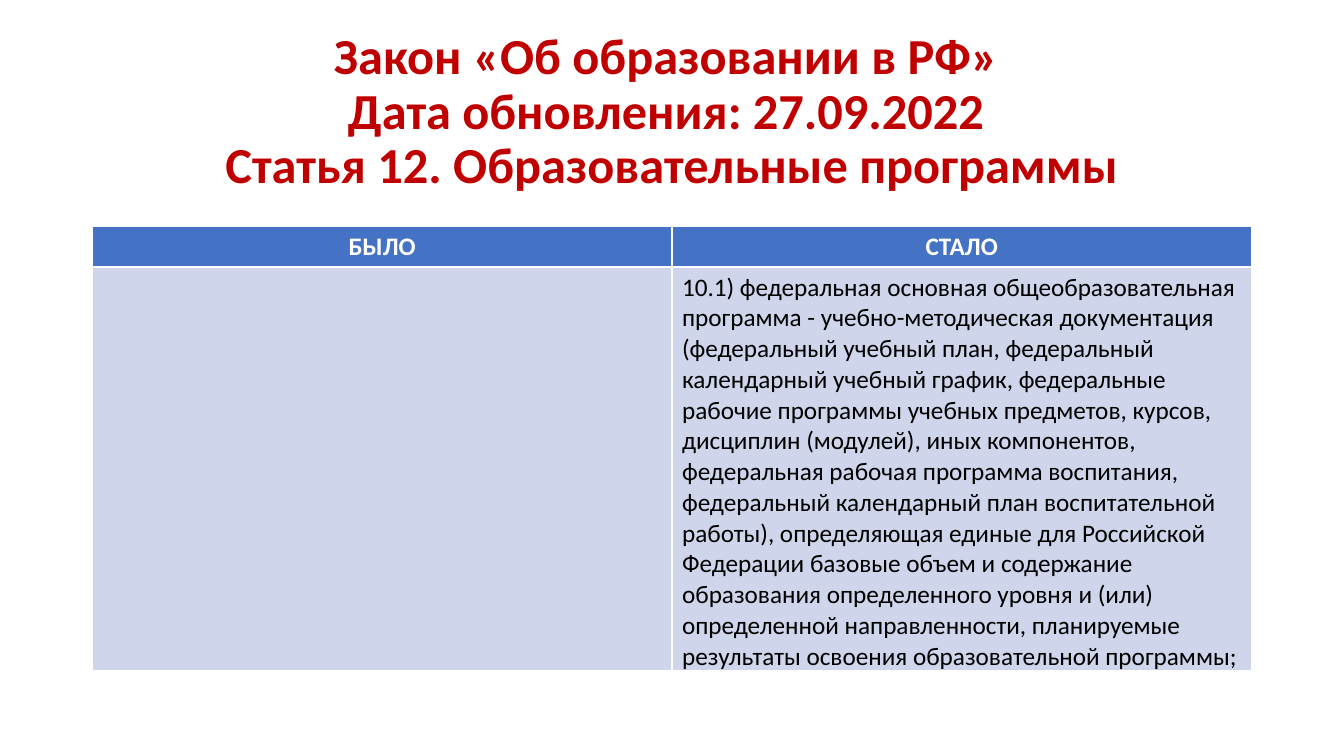
from pptx import Presentation
from pptx.dml.color import RGBColor
from pptx.enum.text import MSO_ANCHOR, PP_ALIGN
from pptx.util import Cm, Pt

RED = RGBColor(0xC0, 0x00, 0x00)
BLUE = RGBColor(0x44, 0x72, 0xC4)
PALE_BLUE = RGBColor(0xCF, 0xD5, 0xEA)
WHITE = RGBColor(0xFF, 0xFF, 0xFF)
BLACK = RGBColor(0x00, 0x00, 0x00)

TITLE = (
    "Закон «Об образовании в РФ» \v"
    "Дата обновления: 27.09.2022 \v"
    "Статья 12. Образовательные программы"
)
NEW_TEXT = (
    "10.1) федеральная основная общеобразовательная программа - "
    "учебно-методическая документация (федеральный учебный план, "
    "федеральный календарный учебный график, федеральные рабочие программы "
    "учебных предметов, курсов, дисциплин (модулей), иных компонентов, "
    "федеральная рабочая программа воспитания, федеральный календарный план "
    "воспитательной работы), определяющая единые для Российской Федерации "
    "базовые объем и содержание образования определенного уровня и (или) "
    "определенной направленности, планируемые результаты освоения "
    "образовательной программы;"
)
LEFT, WIDTH = Cm(2.33), Cm(29.21)


def write(tf, text, align, size, color, bold):
    p = tf.paragraphs[0]
    p.text = text
    p.alignment = align
    fmt = {"name": "Calibri", "size": Pt(size), "bold": bold}
    for font in [p.font] + [r.font for r in p.runs]:
        for name, value in fmt.items():
            setattr(font, name, value)
        font.color.rgb = color
    return p


prs = Presentation()
prs.slide_width, prs.slide_height = Cm(33.87), Cm(19.05)
s = prs.slides.add_slide(prs.slide_layouts[6])

# Title
tf = s.shapes.add_textbox(LEFT, Cm(1.01), WIDTH, Cm(3.68)).text_frame
tf.word_wrap = True
tf.vertical_anchor = MSO_ANCHOR.MIDDLE
write(tf, TITLE, PP_ALIGN.CENTER, 36, RED, True).line_spacing = 0.9

# Comparison table
rows = [
    (Cm(1.03), ("БЫЛО", "СТАЛО"), BLUE, WHITE, PP_ALIGN.CENTER, True),
    (Cm(10.17), ("", NEW_TEXT), PALE_BLUE, BLACK, PP_ALIGN.LEFT, False),
]
table = s.shapes.add_table(2, 2, LEFT, Cm(5.7), WIDTH, Cm(11.2)).table
for row, (height, texts, fill, color, align, bold) in zip(table.rows, rows):
    row.height = height
    for cell, text in zip(row.cells, texts):
        cell.fill.solid()
        cell.fill.fore_color.rgb = fill
        write(cell.text_frame, text, align, 18, color, bold)

prs.save("out.pptx")
